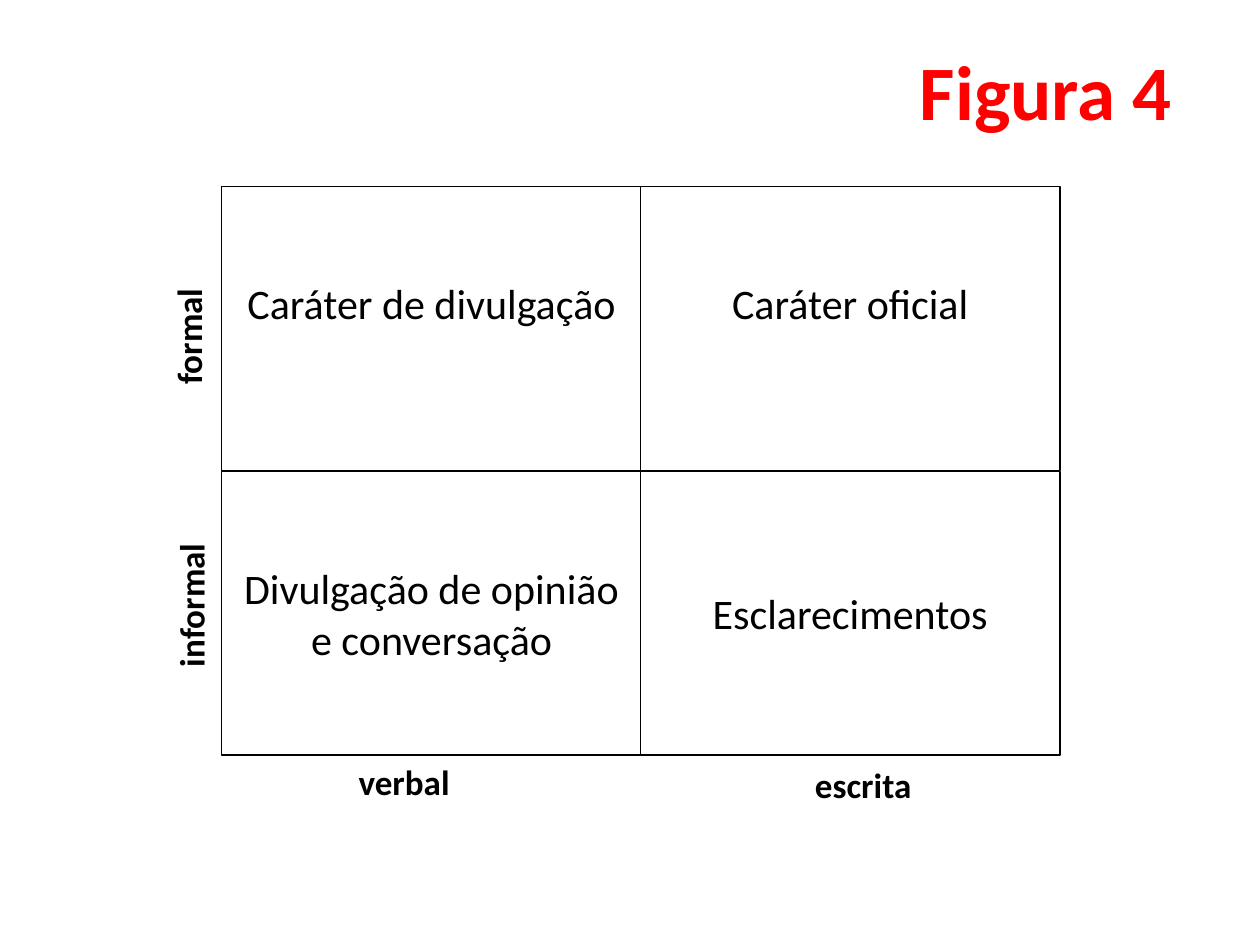
from pptx import Presentation
from pptx.dml.color import RGBColor
from pptx.enum.shapes import MSO_SHAPE as Shape
from pptx.enum.text import MSO_ANCHOR as Anchor, MSO_AUTO_SIZE as AutoSize, PP_ALIGN as Align
from pptx.util import Cm, Pt

BLACK = RGBColor(0, 0, 0)
WHITE = RGBColor(255, 255, 255)
RED = RGBColor(255, 0, 0)

# Matrix geometry in cm
LEFT, TOP = 4.47, 3.76
CELL_W, CELL_H = 8.46, 5.72
STEP_X, STEP_Y = 8.44, 5.74
LABEL_H = 1.11


class MatrixSlide:
    font_name = "Calibri"

    def __init__(self, prs):
        self.slide = prs.slides.add_slide(prs.slide_layouts[5])

    def set_text(self, frame, lines, size, color=BLACK, bold=False, align=Align.LEFT):
        frame.word_wrap = False
        frame.text = "\n".join(lines)
        for paragraph in frame.paragraphs:
            paragraph.alignment = align
            font = paragraph.font
            font.name, font.size, font.bold = self.font_name, Pt(size), bold
            font.color.rgb = color

    def title(self, text, left, top, width, height):
        title = self.slide.shapes.title
        title.left, title.top = Cm(left), Cm(top)
        title.width, title.height = Cm(width), Cm(height)
        self.set_text(title.text_frame, [text], 44, RED, bold=True)
        title.text_frame.auto_size = AutoSize.NONE

    def cell(self, column, row, lines, bottom_inset):
        cell = self.slide.shapes.add_shape(
            Shape.RECTANGLE, Cm(LEFT + column * STEP_X), Cm(TOP + row * STEP_Y),
            Cm(CELL_W), Cm(CELL_H))
        cell.shadow.inherit = False
        cell.fill.solid()
        cell.fill.fore_color.rgb = WHITE
        cell.line.color.rgb = BLACK
        cell.line.width = Pt(0.75)
        frame = cell.text_frame
        frame.vertical_anchor = Anchor.MIDDLE
        frame.margin_bottom = Cm(bottom_inset)
        self.set_text(frame, lines, 24, align=Align.CENTER)

    def label(self, text, left, top, width, rotation=0):
        label = self.slide.shapes.add_textbox(Cm(left), Cm(top), Cm(width), Cm(LABEL_H))
        label.rotation = rotation
        self.set_text(label.text_frame, [text], 20, bold=True)
        label.text_frame.auto_size = AutoSize.SHAPE_TO_FIT_TEXT


def main():
    prs = Presentation()
    prs.slide_width, prs.slide_height = Cm(25.4), Cm(19.05)
    matrix = MatrixSlide(prs)

    matrix.title("Figura 4", 18.29, 0.74, 5.64, 2.13)

    # Quadrants: text in the upper row sits above the middle of its cells
    rows = [
        (1.16, [["Caráter de divulgação"], ["Caráter oficial"]]),
        (0.13, [["Divulgação de opinião", "e conversação"], ["Esclarecimentos"]]),
    ]
    for row, (bottom_inset, cells) in enumerate(rows):
        for column, lines in enumerate(cells):
            matrix.cell(column, row, lines, bottom_inset)

    # Axis labels
    matrix.label("verbal", 6.98, 15.21, 2.36)
    matrix.label("escrita", 16.18, 15.27, 2.46)
    matrix.label("formal", 2.57, 6.22, 2.46, rotation=270)
    matrix.label("informal", 2.34, 11.63, 3.02, rotation=270)

    prs.save("out.pptx")


if __name__ == "__main__":
    main()
